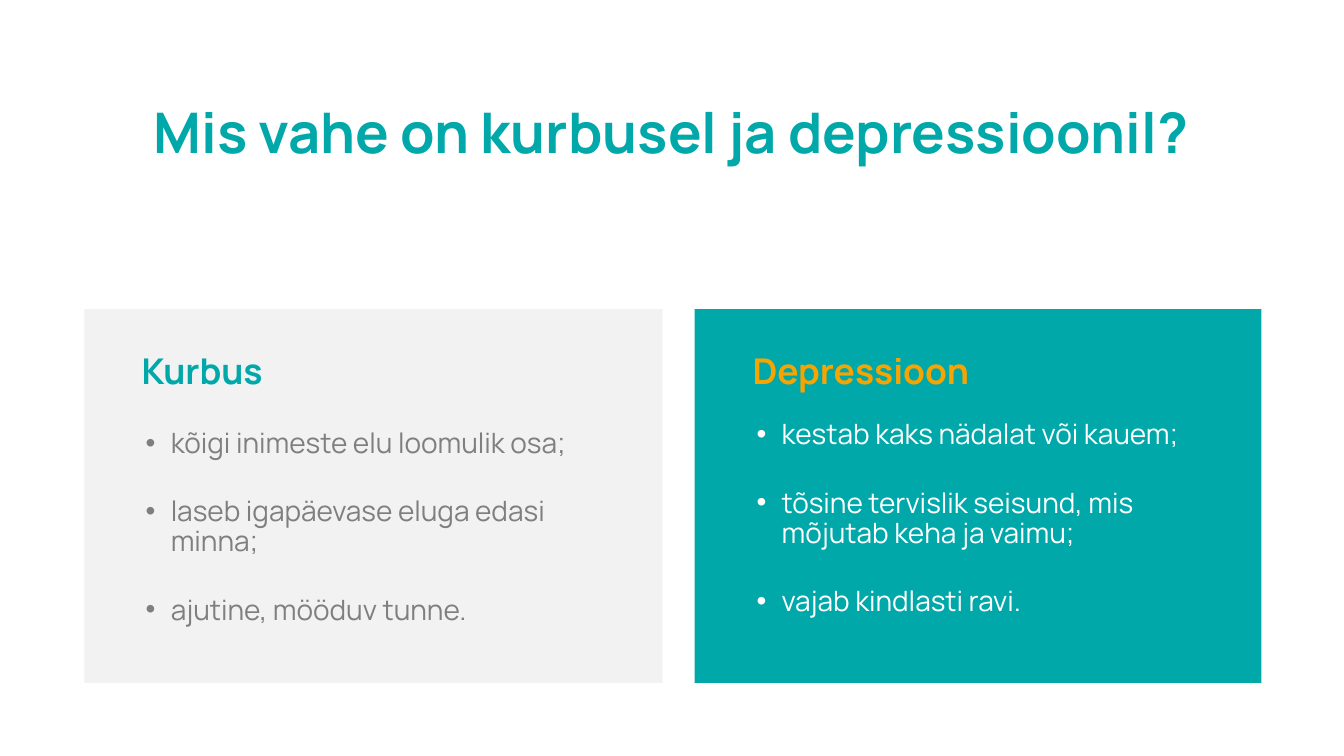
from dataclasses import dataclass

from pptx import Presentation
from pptx.dml.color import RGBColor
from pptx.enum.shapes import MSO_SHAPE
from pptx.enum.text import MSO_ANCHOR, MSO_AUTO_SIZE, PP_ALIGN
from pptx.util import Pt

RECT = MSO_SHAPE.RECTANGLE
TOP = MSO_ANCHOR.TOP
FIXED = MSO_AUTO_SIZE.NONE
LEFT, CENTER = PP_ALIGN.LEFT, PP_ALIGN.CENTER
COMPARE = 4  # template layout: title, then two pairs of heading and list


@dataclass(frozen=True)
class Theme:
    font: str = "Manrope"
    teal: str = "00A8AA"
    amber: str = "F7A400"
    pale: str = "F2F2F2"
    grey: str = "7F7F7F"
    white: str = "FFFFFF"
    title: int = 30
    head: int = 19
    body: int = 15


THEME = Theme()


def place(shape, left, top, width, height):
    shape.left, shape.top = Pt(left), Pt(top)
    shape.width, shape.height = Pt(width), Pt(height)


def add_panel(slide, box, color):
    """Draw a plain panel behind the placeholders."""
    panel = slide.shapes.add_shape(RECT, *map(Pt, box))
    panel.shadow.inherit = False
    panel.fill.solid()
    panel.fill.fore_color.rgb = RGBColor.from_string(color)
    panel.line.fill.background()
    slide.shapes.title.element.addprevious(panel.element)


def set_text(holder, box, lines, size, color, bold=False, align=LEFT, pad=(1.4, 1.4)):
    """Fill a placeholder; pad is its side and top inset."""
    place(holder, *box)
    frame = holder.text_frame
    frame.text = "\n".join(lines)
    frame.word_wrap = True
    frame.auto_size = FIXED
    frame.vertical_anchor = TOP
    frame.margin_left = frame.margin_right = Pt(pad[0])
    frame.margin_top, frame.margin_bottom = Pt(pad[1]), Pt(1.4)
    for par in frame.paragraphs:
        par.alignment = align
        par.space_before = Pt(0)
        font = par.font
        font.name, font.size, font.bold = THEME.font, Pt(size), bold
        font.color.rgb = RGBColor.from_string(color)


def set_list(holder, box, items, color, drop):
    """Fill a bullet list that starts drop points below its box top."""
    set_text(holder, box, items, THEME.body, color, pad=(5, drop))
    for i, par in enumerate(holder.text_frame.paragraphs):
        par.line_spacing = 0.9
        par.space_before = Pt(20.3 if i else 0)
        props = par._p.get_or_add_pPr()
        props.set("marL", str(Pt(13.5)))
        props.set("indent", str(-Pt(13.5)))


def main():
    deck = Presentation()
    deck.slide_width, deck.slide_height = Pt(720), Pt(405)
    slide = deck.slides.add_slide(deck.slide_layouts[COMPARE])
    title, *rest = slide.placeholders

    set_text(title, (63.4, 51.1, 592.6, 95), ["Mis vahe on kurbusel ja depressioonil?"],
             THEME.title, THEME.teal, bold=True, align=CENTER)

    # panel left and width, text left and width, fill, head and list colours
    cards = [
        (45.2, 309.8, 73, 253.4, THEME.pale, THEME.teal, THEME.grey, 7.5, "Kurbus",
         ["kõigi inimeste elu loomulik osa;",
          "laseb igapäevase eluga edasi minna;",
          "ajutine, mööduv tunne."]),
        (372.2, 303.6, 400.3, 247, THEME.teal, THEME.amber, THEME.white, 2.9, "Depressioon",
         ["kestab kaks nädalat või kauem;",
          "tõsine tervislik seisund, mis mõjutab keha ja vaimu;",
          "vajab kindlasti ravi."]),
    ]
    for card, head, body in zip(cards, rest[::2], rest[1::2]):
        left, width, inner, span, fill, accent, ink, drop, name, items = card
        add_panel(slide, (left, 165.6, width, 200.2), fill)
        set_text(head, (inner, 185.8, 190, 34), [name], THEME.head, accent,
                 bold=True, pad=(2.9, 1.4))
        set_list(body, (inner, 222.5, span, 143.3), items, ink, drop)

    deck.save("out.pptx")


if __name__ == "__main__":
    main()
